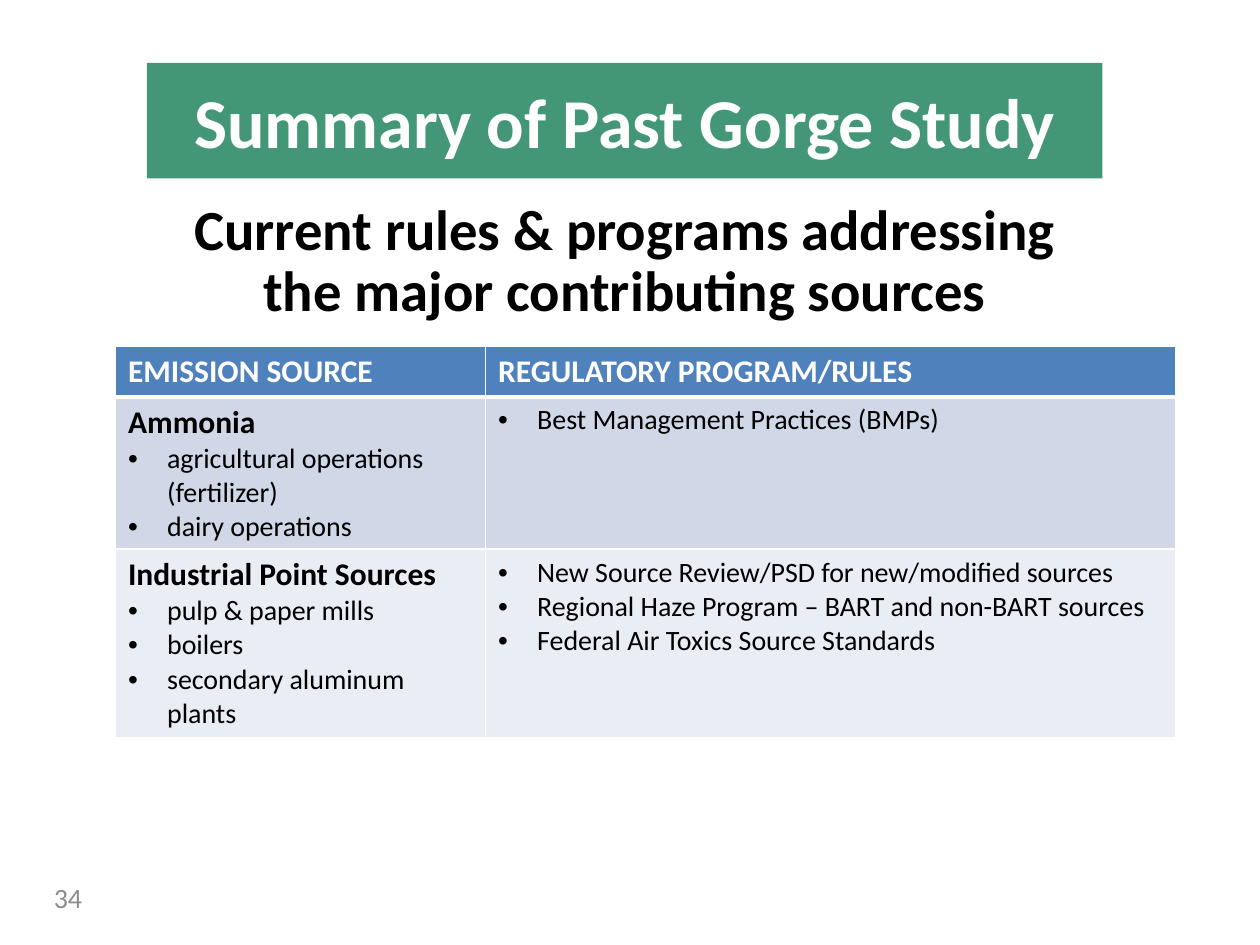
from dataclasses import dataclass

from lxml import etree
from pptx import Presentation
from pptx import util as u
from pptx.dml.color import RGBColor
from pptx.enum import shapes, text
from pptx.oxml import ns

WHITE = RGBColor(0xFF, 0xFF, 0xFF)
BLACK = RGBColor(0x00, 0x00, 0x00)
GRAY = RGBColor(0x8C, 0x8C, 0x8C)
GREEN = RGBColor(0x43, 0x97, 0x77)
HEADER_BLUE = RGBColor(0x4F, 0x81, 0xBD)
BAND_DARK = RGBColor(0xD0, 0xD8, 0xE8)
BAND_LIGHT = RGBColor(0xE9, 0xED, 0xF4)

FONT = "Calibri"
SLIDE_WIDTH, SLIDE_HEIGHT = u.Inches(10), u.Inches(7.5)
GRID_COLUMNS, GRID_ROWS = 120, 90
BULLET_INDENT = u.Inches(0.31)
THIN, THICK = 1, 3


def across(columns: float) -> int:
    return round(SLIDE_WIDTH * columns / GRID_COLUMNS)


def down(rows: float) -> int:
    return round(SLIDE_HEIGHT * rows / GRID_ROWS)


@dataclass(frozen=True)
class Area:
    column: float
    row: float
    columns: float
    rows: float

    def box(self) -> tuple[int, int, int, int]:
        return across(self.column), down(self.row), across(self.columns), down(self.rows)


@dataclass(frozen=True)
class Line:
    words: str
    size: float
    color: RGBColor = BLACK
    bold: bool = False
    bullet: bool = False


@dataclass(frozen=True)
class TableRow:
    height: float
    fill: RGBColor
    cells: tuple[list[Line], list[Line]]
    top: int = THIN
    bottom: int = THIN


def heading(words: str, color: RGBColor = BLACK) -> Line:
    return Line(words, 18, color, bold=True)


def bullets(*items: str) -> list[Line]:
    return [Line(item, 16, bullet=True) for item in items]


BANNER = Area(14, 6, 91, 11)
TITLE = Area(16, 20, 87, 10)
PAGE_NUMBER = Area(1, 83, 8, 5)
TABLE = Area(11, 33, 101, 37)
TABLE_COLUMNS = (35.25, 65.75)
TABLE_ROWS = [
    TableRow(4.5, HEADER_BLUE, (
        [heading("EMISSION SOURCE", WHITE)],
        [heading("REGULATORY PROGRAM/RULES", WHITE)],
    ), bottom=THICK),
    TableRow(14.5, BAND_DARK, (
        [heading("Ammonia"),
         *bullets("agricultural operations (fertilizer)", "dairy operations")],
        bullets("Best Management Practices (BMPs)"),
    ), top=THICK),
    TableRow(18, BAND_LIGHT, (
        [heading("Industrial Point Sources"),
         *bullets("pulp & paper mills", "boilers", "secondary aluminum plants")],
        bullets("New Source Review/PSD for new/modified sources",
                "Regional Haze Program – BART and non-BART sources",
                "Federal Air Toxics Source Standards"),
    )),
]


def write_line(paragraph, line: Line) -> None:
    if line.bullet:
        properties = paragraph._p.get_or_add_pPr()
        properties.set("marL", str(BULLET_INDENT))
        properties.set("indent", str(-BULLET_INDENT))
        etree.SubElement(properties, ns.qn("a:buFont"), typeface="Arial")
        etree.SubElement(properties, ns.qn("a:buChar"), char="•")
    run = paragraph.add_run()
    run.text = line.words
    run.font.name = FONT
    run.font.size = u.Pt(line.size)
    run.font.bold = line.bold
    run.font.color.rgb = line.color


def write_centered(shape, line: Line, alignment=text.PP_ALIGN.CENTER):
    frame = shape.text_frame
    frame.word_wrap = True
    frame.vertical_anchor = text.MSO_ANCHOR.MIDDLE
    paragraph = frame.paragraphs[0]
    paragraph.alignment = alignment
    write_line(paragraph, line)
    return paragraph


def set_borders(cell, top: int, bottom: int) -> None:
    properties = cell._tc.get_or_add_tcPr()
    sides = {"a:lnL": THIN, "a:lnR": THIN, "a:lnT": top, "a:lnB": bottom}
    for position, (side, points) in enumerate(sides.items()):
        border = etree.Element(ns.qn(side), w=str(u.Pt(points)))
        fill = etree.SubElement(border, ns.qn("a:solidFill"))
        etree.SubElement(fill, ns.qn("a:srgbClr"), val=str(WHITE))
        properties.insert(position, border)


def fill_cell(cell, lines: list[Line], row: TableRow) -> None:
    cell.fill.solid()
    cell.fill.fore_color.rgb = row.fill
    set_borders(cell, row.top, row.bottom)
    frame = cell.text_frame
    for index, line in enumerate(lines):
        paragraph = frame.add_paragraph() if index else frame.paragraphs[0]
        write_line(paragraph, line)


def add_rules_table(slide) -> None:
    table = slide.shapes.add_table(
        len(TABLE_ROWS), len(TABLE_COLUMNS), *TABLE.box()).table
    for column, width in zip(table.columns, TABLE_COLUMNS):
        column.width = across(width)
    for row_index, row in enumerate(TABLE_ROWS):
        table.rows[row_index].height = down(row.height)
        for column_index, lines in enumerate(row.cells):
            fill_cell(table.cell(row_index, column_index), lines, row)


def add_banner(slide) -> None:
    banner = slide.shapes.add_shape(shapes.MSO_SHAPE.RECTANGLE, *BANNER.box())
    banner.shadow.inherit = False
    banner.fill.solid()
    banner.fill.fore_color.rgb = GREEN
    banner.line.fill.background()
    write_centered(banner, Line("Summary of Past Gorge Study", 40, WHITE, bold=True))


def main() -> None:
    presentation = Presentation()
    presentation.slide_width = SLIDE_WIDTH
    presentation.slide_height = SLIDE_HEIGHT
    slide = presentation.slides.add_slide(presentation.slide_layouts[6])

    title = write_centered(
        slide.shapes.add_textbox(*TITLE.box()),
        Line("Current rules & programs addressing the major contributing sources",
             32.4, bold=True))
    title.line_spacing = 0.9
    write_centered(slide.shapes.add_textbox(*PAGE_NUMBER.box()),
                   Line("34", 16, GRAY), text.PP_ALIGN.RIGHT)
    add_banner(slide)
    add_rules_table(slide)
    presentation.save("out.pptx")


if __name__ == "__main__":
    main()
